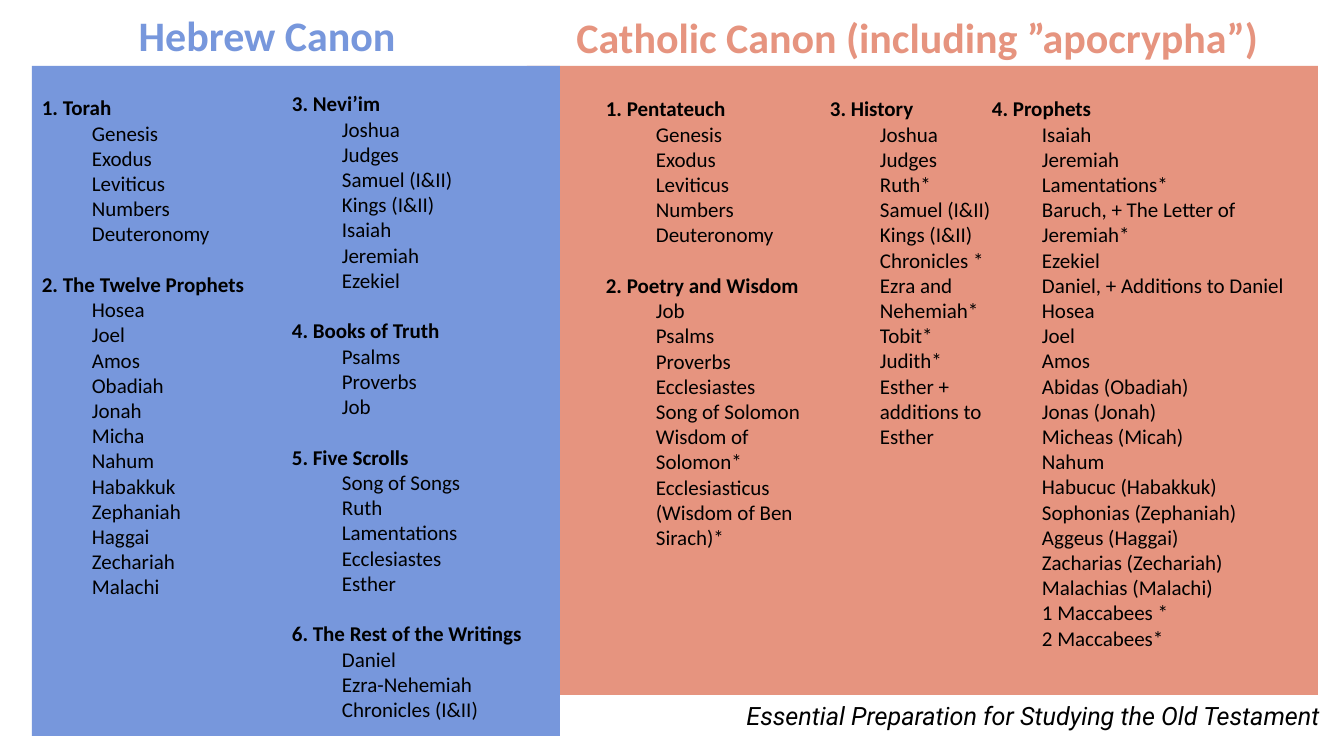
import pptx
import pptx.dml.color
import pptx.enum.shapes
import pptx.enum.text
import pptx.util

EMU_PER_PX = 914400 / 100.8
THEME = {
    "hebrew": "7797DC", "catholic": "E6947F", "ink": "000000",
    "font": "Calibri", "footer_font": "Roboto",
    "title": 30, "body": 15, "footer": 18,
}
BOOK_INDENT = 50
SECTION_GAP = 18.2  # points, one line of body text
ALIGN = pptx.enum.text.PP_ALIGN


def px(length):
    return pptx.util.Emu(round(length * EMU_PER_PX))


def add_text(bounds, lines, size, color="ink", font="font", align=ALIGN.LEFT):
    """Add a wrapping text box with one paragraph per line and return its paragraphs."""
    box = slide.shapes.add_textbox(*map(px, bounds))
    frame = box.text_frame
    frame.word_wrap = True
    frame.text = "\n".join(lines)
    for para in frame.paragraphs:
        para.alignment = align
        for span in para.runs:
            span.font.name = THEME[font]
            span.font.size = pptx.util.Pt(THEME[size])
            span.font.color.rgb = pptx.dml.color.RGBColor.from_string(THEME[color])
    return frame.paragraphs


deck = pptx.Presentation()
deck.slide_width, deck.slide_height = px(1344), px(756)
slide = deck.slides.add_slide(deck.slide_layouts[6])

panels = [("catholic", (527, 66, 791, 629)), ("hebrew", (32, 66, 528, 670))]
for color, bounds in panels:
    panel = slide.shapes.add_shape(
        pptx.enum.shapes.MSO_SHAPE.RECTANGLE, *map(px, bounds))
    panel.shadow.inherit = False
    panel.fill.solid()
    panel.fill.fore_color.rgb = pptx.dml.color.RGBColor.from_string(THEME[color])
    panel.line.fill.background()

titles = [
    ("Hebrew Canon ", "hebrew", (32, 5, 480, 61)),
    ("Catholic Canon (including ”apocrypha”) ", "catholic", (527, 7, 791, 61)),
]
for title, color, bounds in titles:
    para = add_text(bounds, [title], "title", color, align=ALIGN.CENTER)[0]
    para.runs[0].font.bold = True

columns = [
    ((32, 90, 250, 544), {
        "1. Torah": ["Genesis", "Exodus", "Leviticus", "Numbers", "Deuteronomy"],
        "2. The Twelve Prophets": [
            "Hosea", "Joel", "Amos", "Obadiah", "Jonah", "Micha", "Nahum",
            "Habakkuk", "Zephaniah", "Haggai", "Zechariah", "Malachi"],
    }),
    ((282, 86, 334, 671), {
        "3. Nevi’im": ["Joshua", "Judges", "Samuel (I&II)", "Kings (I&II)",
                       "Isaiah", "Jeremiah", "Ezekiel"],
        "4. Books of Truth": ["Psalms", "Proverbs", "Job"],
        "5. Five Scrolls": ["Song of Songs", "Ruth", "Lamentations",
                            "Ecclesiastes", "Esther"],
        "6. The Rest of the Writings": ["Daniel", "Ezra-Nehemiah",
                                        "Chronicles (I&II)"],
    }),
    ((596, 91, 230, 544), {
        "1. Pentateuch": ["Genesis", "Exodus", "Leviticus", "Numbers", "Deuteronomy"],
        "2. Poetry and Wisdom": [
            "Job", "Psalms", "Proverbs", "Ecclesiastes", "Song of Solomon",
            "Wisdom of Solomon*", "Ecclesiasticus", "(Wisdom of Ben Sirach)*"],
    }),
    ((820, 91, 183, 392), {
        "3. History": [
            "Joshua", "Judges", "Ruth*", "Samuel (I&II)", "Kings (I&II)",
            "Chronicles *", "Ezra and Nehemiah*", "Tobit*", "Judith*",
            "Esther + additions to Esther"],
    }),
    ((982, 91, 348, 596), {
        "4. Prophets": [
            "Isaiah", "Jeremiah", "Lamentations*",
            "Baruch, + The Letter of Jeremiah*", "Ezekiel",
            "Daniel, + Additions to Daniel Hosea", "Joel", "Amos",
            "Abidas (Obadiah)", "Jonas (Jonah)", "Micheas (Micah)", "Nahum",
            "Habucuc (Habakkuk)", "Sophonias (Zephaniah)", "Aggeus (Haggai)",
            "Zacharias (Zechariah)", "Malachias (Malachi)",
            "1 Maccabees *", "2 Maccabees*"],
    }),
]
for bounds, sections in columns:
    lines = [line for heading, books in sections.items() for line in (heading, *books)]
    for position, para in enumerate(add_text(bounds, lines, "body")):
        if para.text in sections:
            para.runs[0].font.bold = True
            if position:
                para.space_before = pptx.util.Pt(SECTION_GAP)
        else:
            para.level = 1
            properties = para._p.get_or_add_pPr()
            properties.set("marL", str(px(BOOK_INDENT)))
            properties.set("indent", "0")

footer = add_text((649, 695, 681, 40),
                  ["Essential Preparation for Studying the Old Testament"],
                  "footer", font="footer_font", align=ALIGN.RIGHT)[0]
footer.runs[0].font.italic = True

deck.save("out.pptx")
